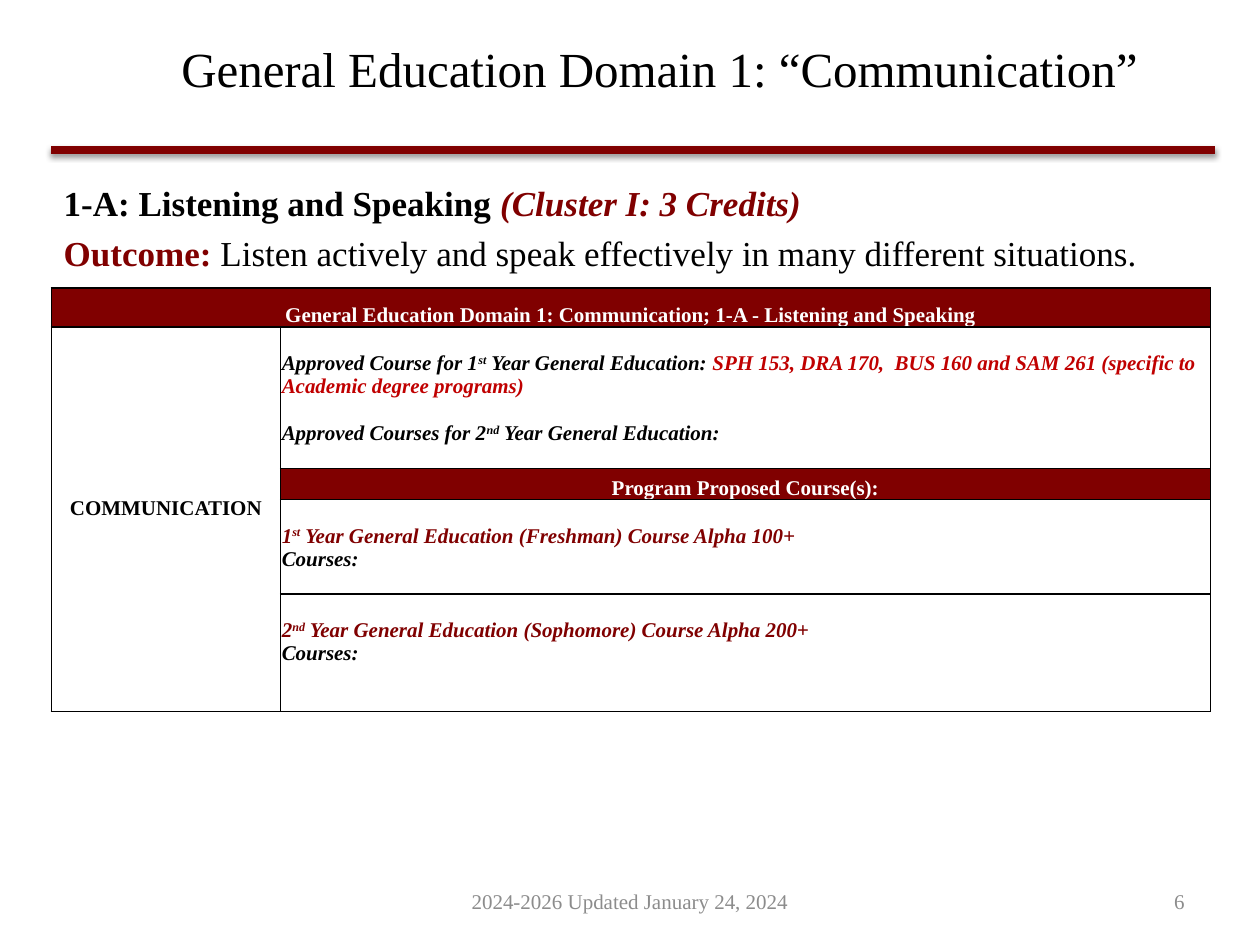
from dataclasses import dataclass

from lxml import etree
from pptx import Presentation
from pptx import util as u
from pptx.dml.color import RGBColor
from pptx.enum import shapes, text
from pptx.oxml import ns, parse_xml

Pt = u.Pt
ALIGN = text.PP_ALIGN
ANCHOR = text.MSO_ANCHOR


@dataclass(frozen=True)
class Theme:
    font: str = "Times New Roman"
    black: str = "000000"
    white: str = "FFFFFF"
    maroon: str = "800000"
    red: str = "C00000"
    gray: str = "8C8C8C"
    title: float = 28
    body: float = 20
    small: float = 12
    line: float = 13.4
    inset: float = 0.72


T = Theme()


def add_run(p, content, size=T.small, color=T.black, bold=False, italic=False, sup=False):
    r = p.add_run()
    r.text = content
    f = r.font
    f.name, f.size, f.bold, f.italic = T.font, Pt(size), bold, italic
    f.color.rgb = RGBColor.from_string(color)
    if sup:
        r._r.get_or_add_rPr().set("baseline", "30000")


def write(tf, *paras, align=ALIGN.LEFT, gap=0, **fmt):
    tf.word_wrap = True
    for i, runs in enumerate(paras):
        p = tf.paragraphs[0] if i == 0 else tf.add_paragraph()
        p.alignment = align
        if i and gap:
            p.space_before = Pt(gap)
        for content, own in runs:
            add_run(p, content, **{**fmt, **own})


def ordinal(before, suffix, after):
    return [(before, {}), (suffix, {"sup": True}), (after, {})]


def place(sp, x, y, w, h):
    sp.left, sp.top, sp.width, sp.height = Pt(x), Pt(y), Pt(w), Pt(h)


def add_title(s, x, y, w, h):
    sp = s.shapes.title
    place(sp, x, y, w, h)
    tf = sp.text_frame
    tf.vertical_anchor = ANCHOR.MIDDLE
    tf.margin_left = Pt(41)
    write(tf, [("General Education Domain 1: “Communication”", {})],
          align=ALIGN.CENTER, size=T.title)


def add_rule(s, x, y, w):
    c = s.shapes.add_connector(shapes.MSO_CONNECTOR.STRAIGHT, Pt(x), Pt(y), Pt(x + w), Pt(y))
    c.line.color.rgb = RGBColor.from_string(T.maroon)
    c.line.width = Pt(4.5)
    c._element.spPr.append(parse_xml(
        f'<a:effectLst {ns.nsdecls("a")}>'
        f'<a:outerShdw blurRad="{Pt(3.1)}" dist="{Pt(1.6)}" dir="5400000" rotWithShape="0">'
        f'<a:srgbClr val="{T.black}"><a:alpha val="38000"/></a:srgbClr>'
        '</a:outerShdw></a:effectLst>'))


def add_outcome(s, x, y, w, h):
    tf = s.shapes.add_textbox(Pt(x), Pt(y), Pt(w), Pt(h)).text_frame
    write(tf,
          [("1-A: Listening and Speaking ", {"bold": True}),
           ("(Cluster I: 3 Credits)", {"bold": True, "italic": True, "color": T.maroon})],
          [("Outcome: ", {"bold": True, "color": T.maroon}),
           ("Listen actively and speak effectively in many different situations.", {})],
          size=T.body, gap=5)


def add_borders(cell):
    tcPr = cell._tc.get_or_add_tcPr()
    for side in ("lnL", "lnR", "lnT", "lnB"):
        ln = etree.SubElement(tcPr, ns.qn(f"a:{side}"), w=str(Pt(1)))
        fill = etree.SubElement(ln, ns.qn("a:solidFill"))
        etree.SubElement(fill, ns.qn("a:srgbClr"), val=T.black)


def fill_cell(cell, *paras, anchor=ANCHOR.TOP, fill=None, top=T.inset, bottom=0, **fmt):
    cell.vertical_anchor = anchor
    cell.margin_left = cell.margin_right = Pt(T.inset)
    cell.margin_top, cell.margin_bottom = Pt(top), Pt(bottom)
    if fill:
        cell.fill.solid()
        cell.fill.fore_color.rgb = RGBColor.from_string(fill)
    write(cell.text_frame, *paras, bold=True, **fmt)


def add_courses(s, x, y, w, h):
    cols = (131, w - 131)
    heights = (22.3, 80.8, 17.8, 54)
    rows = (*heights, h - sum(heights))
    tbl = s.shapes.add_table(len(rows), len(cols), Pt(x), Pt(y), Pt(w), Pt(h)).table
    tbl.first_row = tbl.horz_banding = False
    for col, width in zip(tbl.columns, cols):
        col.width = Pt(width)
    for row, height in zip(tbl.rows, rows):
        row.height = Pt(height)
    for cell in tbl.iter_cells():
        add_borders(cell)
        cell.fill.background()
    tbl.cell(0, 0).merge(tbl.cell(0, 1))
    tbl.cell(1, 0).merge(tbl.cell(4, 0))

    band = dict(anchor=ANCHOR.BOTTOM, fill=T.maroon, color=T.white, align=ALIGN.CENTER)
    entry = dict(top=T.inset + T.line, italic=True)
    fill_cell(tbl.cell(0, 0),
              [("General Education Domain 1: Communication; 1-A - Listening and Speaking", {})],
              **band)
    fill_cell(tbl.cell(1, 0), [("COMMUNICATION", {})],
              anchor=ANCHOR.MIDDLE, align=ALIGN.CENTER, bottom=T.line)
    fill_cell(tbl.cell(1, 1),
              ordinal("Approved Course for 1", "st", " Year General Education: ")
              + [("SPH 153, DRA 170,  BUS 160 and SAM 261 (specific to Academic degree programs)",
                  {"color": T.red})],
              ordinal("Approved Courses for 2", "nd", " Year General Education:"),
              gap=T.line, **entry)
    fill_cell(tbl.cell(2, 1), [("Program Proposed Course(s):", {})], **band)
    years = (("1", "st", "Freshman", "100+"), ("2", "nd", "Sophomore", "200+"))
    for row, (number, suffix, level, alpha) in enumerate(years, 3):
        heading = ordinal(number, suffix, f" Year General Education ({level}) Course Alpha {alpha}")
        fill_cell(tbl.cell(row, 1), heading, [("Courses:", {"color": T.black})],
                  color=T.maroon, **entry)


def add_footer(s, x, y, w, h):
    number_w = 168
    parts = (("2024-2026 Updated January 24, 2024", x, w, ALIGN.CENTER),
             ("6", x + w - number_w, number_w, ALIGN.RIGHT))
    for content, left, width, align in parts:
        tf = s.shapes.add_textbox(Pt(left), Pt(y), Pt(width), Pt(h)).text_frame
        tf.vertical_anchor = ANCHOR.MIDDLE
        write(tf, [(content, {})], align=align, color=T.gray)


def main():
    prs = Presentation()
    prs.slide_width, prs.slide_height = Pt(720), Pt(540)
    s = prs.slides.add_slide(prs.slide_layouts[5])
    add_title(s, 36, 4.3, 648, 69)
    add_rule(s, 29.3, 85.7, 665)
    add_courses(s, 29.3, 164.7, 662.4, 242)
    add_outcome(s, 29.3, 100, 662.4, 61)
    add_footer(s, 36, 500.5, 648, 28.8)
    prs.save("out.pptx")


if __name__ == "__main__":
    main()
